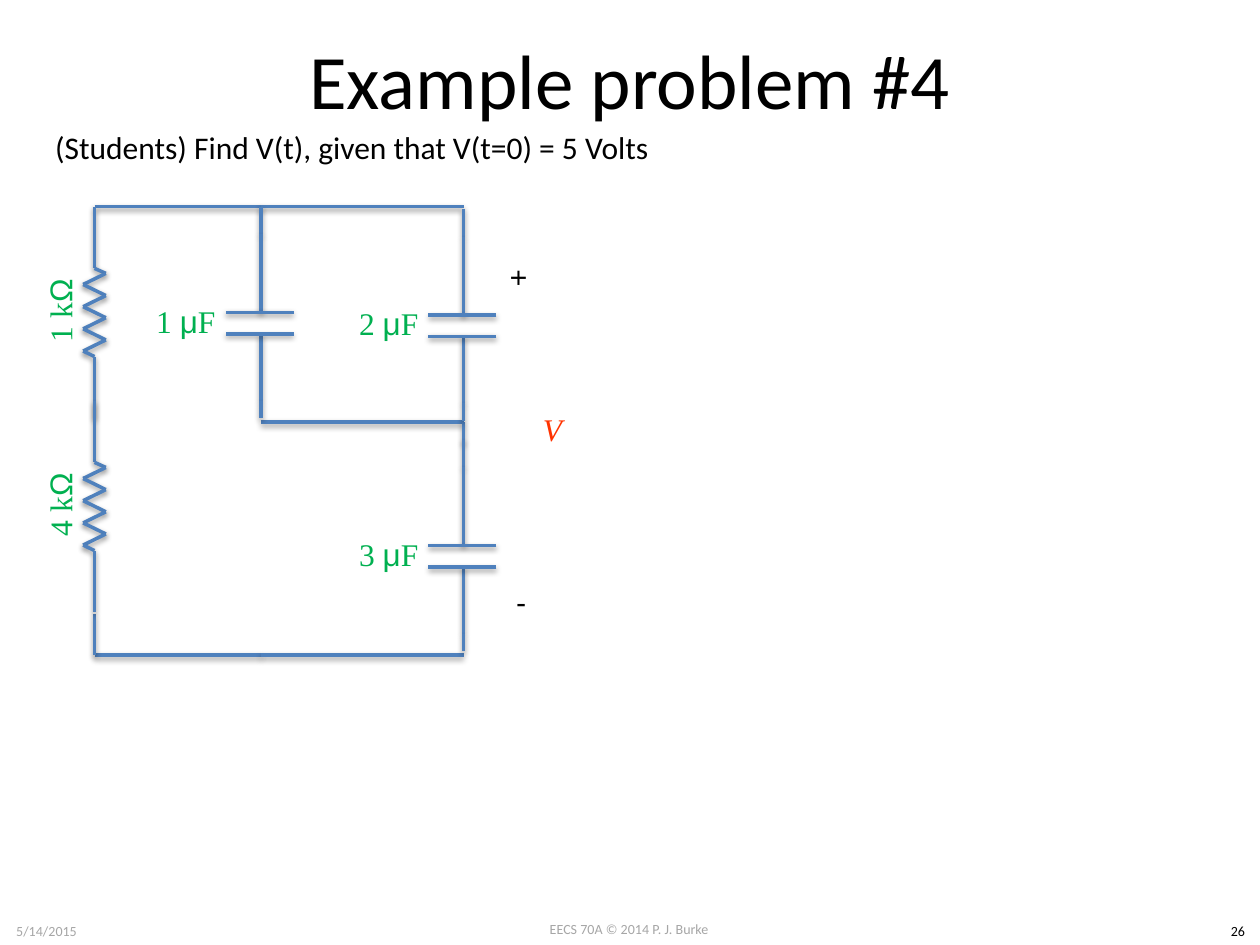
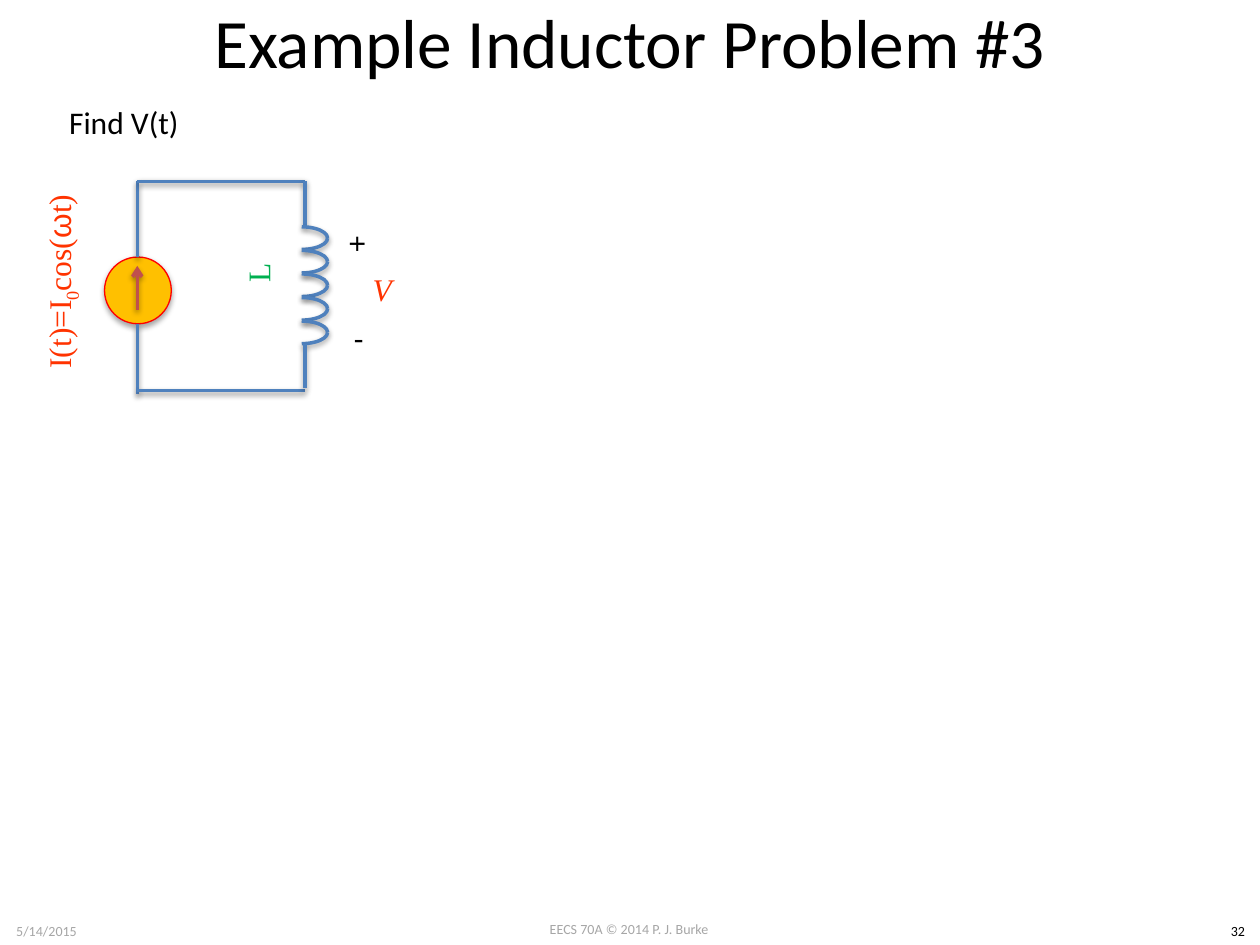
from itertools import pairwise

from lxml.etree import SubElement
from pptx import Presentation
from pptx.dml.color import RGBColor
from pptx.enum.shapes import MSO_CONNECTOR, MSO_SHAPE
from pptx.enum.text import MSO_ANCHOR, MSO_AUTO_SIZE, PP_ALIGN
from pptx.oxml.ns import qn
from pptx.util import Inches, Pt

BLACK = RGBColor(0x00, 0x00, 0x00)
GRAY = RGBColor(0xA6, 0xA6, 0xA6)
WIRE = RGBColor(0x4F, 0x81, 0xBD)
GREEN = RGBColor(0x00, 0xB0, 0x50)
ORANGE = RGBColor(0xFF, 0x33, 0x00)
ARROW = RGBColor(0xC0, 0x50, 0x4D)
GOLD = RGBColor(0xFF, 0xC0, 0x00)
RED = RGBColor(0xFF, 0x00, 0x00)

BODY = {"name": "Calibri", "size": Pt(18), "color": BLACK}
FOOTER = {**BODY, "size": Pt(8), "color": GRAY}
PAGE = {**FOOTER, "color": BLACK}
VALUE = {**BODY, "name": "Times New Roman", "color": GREEN}
SOURCE = {**VALUE, "color": ORANGE}
VOLTAGE = {**SOURCE, "italic": True}
GREEK = {"name": "Arial"}


def set_font(font, style):
    for name, value in style.items():
        if name == "color":
            font.color.rgb = value
        else:
            setattr(font, name, value)


def add_shadow(sp, alpha=38, dist=20000):
    effects = SubElement(sp.element.spPr, qn("a:effectLst"))
    shadow = SubElement(effects, qn("a:outerShdw"), blurRad="40000",
                        dist=str(dist), dir="5400000", rotWithShape="0")
    color = SubElement(shadow, qn("a:srgbClr"), val=str(BLACK))
    SubElement(color, qn("a:alpha"), val=str(alpha * 1000))


def set_line(sp, color=WIRE, width=2):
    sp.line.color.rgb = color
    sp.line.width = Pt(width)


def add_line(shapes, start, end, color=WIRE):
    c = shapes.add_connector(MSO_CONNECTOR.STRAIGHT, *map(Inches, start + end))
    set_line(c, color)
    add_shadow(c)
    return c


def add_path(shapes, points):
    for start, end in pairwise(points):
        add_line(shapes, start, end)


def add_text(shapes, box, runs, style, rotation=0, wrap=True, align=PP_ALIGN.CENTER,
             anchor=MSO_ANCHOR.MIDDLE):
    sp = shapes.add_textbox(*map(Inches, box))
    sp.rotation = rotation
    tf = sp.text_frame
    frame = {"word_wrap": wrap, "vertical_anchor": anchor,
             "auto_size": MSO_AUTO_SIZE.NONE if wrap else MSO_AUTO_SIZE.SHAPE_TO_FIT_TEXT}
    for name, value in frame.items():
        setattr(tf, name, value)
    p = tf.paragraphs[0]
    p.alignment = align
    for text, changes in runs:
        r = p.add_run()
        r.text = text
        set_font(r.font, {**style, **changes})
    return sp


def add_note(shapes, box, text, rotation=0):
    add_text(shapes, box, [(text, {})], BODY, rotation, False,
             PP_ALIGN.LEFT, MSO_ANCHOR.TOP)


def add_value(shapes, left, top, runs, rotation=0):
    add_text(shapes, (left, top, 1.19, 0.73), runs, VALUE, rotation)


def add_voltage(shapes, left, top):
    add_text(shapes, (left, top, 0.77, 0.61), [("V", {})], VOLTAGE)


def add_resistor(s, x, top, value):
    shapes = s.shapes.add_group_shape().shapes
    add_value(shapes, x - 0.87, top + 0.46, [(value + " k", {}), ("Ω", GREEK)], 270)
    zigzag = [(x + 0.09 * (-1) ** i, top + 0.53 + 0.088 * i) for i in range(8)]
    add_path(shapes, [(x, top), (x, top + 0.49), *zigzag,
                      (x, top + 1.19), (x, top + 1.68)])


def add_capacitor(s, x, plate, value):
    shapes = s.shapes.add_group_shape().shapes
    for lead in ((-0.84, -0.62, 0), (0.17, 0.7, 0.84)):
        add_path(shapes, [(x, plate + dy) for dy in lead])
    for y in (plate, plate + 0.17):
        add_line(shapes, (x + 0.26, y), (x - 0.28, y))
    add_value(shapes, x - 1.19, plate - 0.3,
              [(value + " ", {}), ("μ", GREEK), ("F", {})])


def add_inductor(s, x, top):
    shapes = s.shapes.add_group_shape().shapes
    add_line(shapes, (x, top + 0.36), (x, top))
    for turn in range(5):
        for flipped in (False, True):
            box = (x - 0.23, top + 0.36 + 0.187 * turn, 0.41, 0.18)
            sp = shapes.add_shape(MSO_SHAPE.ARC, *map(Inches, box))
            sp.fill.background()
            set_line(sp)
            add_shadow(sp)
            if flipped:
                sp.element.spPr.find(qn("a:xfrm")).set("flipV", "1")
    add_line(shapes, (x, top + 1.64), (x, top + 1.29))
    add_value(shapes, x - 0.97, top + 0.36, [("L", {})], 270)


def add_current_source(s, x, top):
    sp = s.shapes.add_shape(MSO_SHAPE.OVAL, *map(Inches, (x - 0.26, top, 0.53, 0.53)))
    sp.fill.solid()
    sp.fill.fore_color.rgb = GOLD
    set_line(sp, RED, 0.75)
    add_shadow(sp, 35, 23000)
    arrow = add_line(s.shapes, (x, top + 0.42), (x, top + 0.07), ARROW)
    SubElement(arrow.line._get_or_add_ln(), qn("a:tailEnd"), type="arrow")


def add_slide(prs, title, height, size, page):
    s = prs.slides.add_slide(prs.slide_layouts[5])
    sp = s.shapes.title
    place = {"left": 0.5, "top": 0, "width": 9, "height": height}
    for name, value in place.items():
        setattr(sp, name, Inches(value))
    sp.text_frame.vertical_anchor = MSO_ANCHOR.MIDDLE
    p = sp.text_frame.paragraphs[0]
    p.alignment = PP_ALIGN.CENTER
    r = p.add_run()
    r.text = title
    set_font(r.font, {**BODY, "size": Pt(size)})
    footers = [((3.83, 7.26, 2.33, 0.24), "EECS 70A © 2014 P. J. Burke", FOOTER),
               ((0, 7.27, 0.74, 0.24), "5/14/2015", FOOTER),
               ((9.65, 7.27, 0.35, 0.24), page, PAGE)]
    for box, text, style in footers:
        add_text(s.shapes, box, [(text, {})], style, anchor=MSO_ANCHOR.TOP)
    return s


def add_capacitor_slide(prs):
    s = add_slide(prs, "Example problem #4", 1.25, 44, "26")
    add_note(s.shapes, (0.34, 0.97, 5, 0.4),
             "(Students) Find V(t), given that V(t=0) = 5 Volts")
    left, middle, right = 0.75, 2.07, 3.68
    top, node, bottom = 1.64, 3.35, 5.2
    for y in (top, bottom):
        add_path(s.shapes, [(x, y) for x in (left, middle, right)])
    add_line(s.shapes, (middle, node), (right, node))
    add_line(s.shapes, (right, 3.52), (right, node))
    add_line(s.shapes, (left, bottom), (left, 4.87))
    for y, value in ((top, "1"), (3.18, "4")):
        add_resistor(s, left, y, value)
    for x, plate, value in ((middle, 2.48, "1"), (right, 2.5, "2"), (right, 4.33, "3")):
        add_capacitor(s, x, plate, value)
    add_note(s.shapes, (3.97, 2.01, 0.33, 0.4), "+", 90)
    add_note(s.shapes, (4, 4.58, 0.28, 0.4), "-")
    add_voltage(s.shapes, 4, 3.1)


def add_inductor_slide(prs):
    s = add_slide(prs, "Example Inductor Problem #3", 0.65, 39.6, "32")
    add_note(s.shapes, (0.45, 0.77, 1.08, 0.4), "Find V(t)")
    left, right, top, bottom = 1.09, 2.42, 1.44, 3.1
    add_current_source(s, left, 2.04)
    add_line(s.shapes, (left, 2.04), (left, top))
    add_line(s.shapes, (left, 2.57), (left, 3.13))
    for y in (top, bottom):
        add_line(s.shapes, (left, y), (right, y))
    add_text(s.shapes, (-0.57, 1.93, 2.11, 0.61),
             [("I(t)=I", {}), ("0", {}), ("cos(", {}), ("ω", GREEK), ("t)", {})],
             SOURCE, 270).text_frame.paragraphs[0].runs[1].font._element.set(
                 "baseline", "-25000")
    add_inductor(s, right, top)
    add_note(s.shapes, (2.69, 1.74, 0.33, 0.4), "+", 90)
    add_note(s.shapes, (2.71, 2.48, 0.28, 0.4), "-")
    add_voltage(s.shapes, 2.65, 1.99)


def main():
    prs = Presentation()
    prs.slide_width, prs.slide_height = Inches(10), Inches(7.5)
    add_capacitor_slide(prs)
    add_inductor_slide(prs)
    prs.save("out.pptx")


if __name__ == "__main__":
    main()
